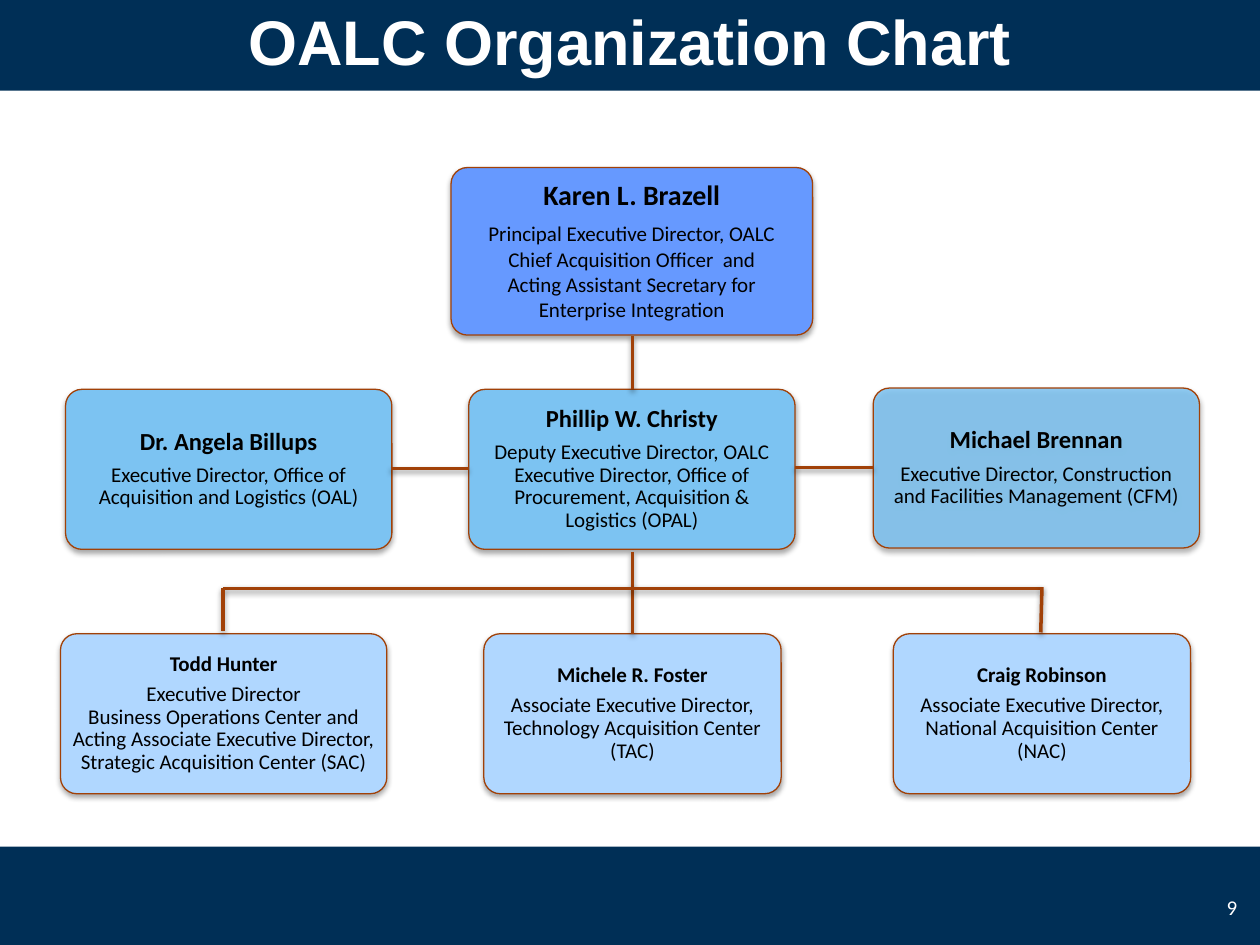
from lxml import etree
from pptx import Presentation
from pptx.dml.color import RGBColor
from pptx.enum.shapes import MSO_CONNECTOR as CONN, MSO_SHAPE as SHAPE
from pptx.enum.text import MSO_ANCHOR as ANCHOR, PP_ALIGN as ALIGN
from pptx.oxml.ns import qn
from pptx.util import Inches, Pt

NAVY = RGBColor(0x00, 0x2F, 0x56)
RUST = RGBColor(0xA1, 0x41, 0x08)
ROYAL = RGBColor(0x66, 0x99, 0xFF)
SKY = RGBColor(0x7C, 0xC3, 0xF2)
PALE = RGBColor(0xB0, 0xD7, 0xFF)
BLACK = RGBColor(0x00, 0x00, 0x00)
WHITE = RGBColor(0xFF, 0xFF, 0xFF)


class ChartSlide:
    """Style of the organization chart and the slide it is drawn on."""

    body_size = 12
    corner = 0.13
    gap = 0.35  # space after a paragraph, as a share of its text size

    def __init__(self, s):
        self.s = s

    def apply(self, target, values):
        for name, value in values.items():
            setattr(target, name, value)

    def add_shadow(self, sp, alpha, dist):
        effects = etree.SubElement(sp._element.spPr, qn("a:effectLst"))
        shadow = etree.SubElement(
            effects, qn("a:outerShdw"), blurRad=str(Pt(3.1)),
            dist=str(Pt(dist)), dir="5400000", rotWithShape="0")
        color = etree.SubElement(shadow, qn("a:srgbClr"), val="000000")
        etree.SubElement(color, qn("a:alpha"), val=str(alpha * 1000))

    def frame(self, sp, inset):
        tf = sp.text_frame
        margins = ("margin_left", "margin_right", "margin_top", "margin_bottom")
        self.apply(tf, {"word_wrap": True, "vertical_anchor": ANCHOR.MIDDLE,
                        **dict.fromkeys(margins, Inches(inset))})
        return tf

    def fill_text(self, p, text, align=ALIGN.CENTER, spacing=None, after=0,
                  **font):
        self.apply(p, {"alignment": align, "line_spacing": spacing,
                       "space_after": Pt(after)})
        r = p.add_run()
        r.text = text
        color = font.pop("color")
        self.apply(r.font, font)
        r.font.color.rgb = color

    def band(self, y):
        sp = self.s.shapes.add_shape(
            SHAPE.RECTANGLE, 0, Inches(y), Inches(10), Inches(0.8))
        sp.shadow.inherit = False
        sp.fill.solid()
        sp.fill.fore_color.rgb = NAVY
        sp.line.fill.background()

    def label(self, x, y, w, h, text, **style):
        sp = self.s.shapes.add_textbox(*map(Inches, (x, y, w, h)))
        self.fill_text(self.frame(sp, 0.05).paragraphs[0], text,
                       color=WHITE, **style)

    def person(self, x, y, w, h, fill, name, size, lines, spacing=0.9,
               inset=0.05, opacity=100):
        sp = self.s.shapes.add_shape(
            SHAPE.ROUNDED_RECTANGLE, *map(Inches, (x, y, w, h)))
        sp.adjustments[0] = self.corner / h
        sp.fill.solid()
        sp.fill.fore_color.rgb = fill
        if opacity < 100:
            color = sp._element.spPr.find(qn("a:solidFill"))[0]
            etree.SubElement(color, qn("a:alpha"), val=str(opacity * 1000))
        sp.line.color.rgb = RUST
        sp.line.width = Pt(0.75)
        self.add_shadow(sp, 35, 1.8)

        tf = self.frame(sp, inset)
        font = {"name": "Calibri", "color": BLACK}
        self.fill_text(tf.paragraphs[0], name, spacing=0.9,
                       after=size * self.gap, size=Pt(size), bold=True, **font)
        for i, text in enumerate(lines, 1):
            last = i == len(lines) and spacing is not None
            self.fill_text(tf.add_paragraph(), text, spacing=spacing,
                           after=self.body_size * self.gap if last else 0,
                           size=Pt(self.body_size), bold=False, **font)

    def link(self, *ends):
        c = self.s.shapes.add_connector(CONN.STRAIGHT, *map(Inches, ends))
        c.line.color.rgb = RUST
        c.line.width = Pt(2)
        self.add_shadow(c, 38, 1.6)


def main():
    prs = Presentation()
    prs.slide_width, prs.slide_height = Inches(10), Inches(7.5)
    chart = ChartSlide(prs.slides.add_slide(prs.slide_layouts[6]))

    # Header and footer
    for y in (6.72, -0.08):
        chart.band(y)
    chart.label(0, -0.08, 10, 0.8, "OALC Organization Chart",
                name="Arial", size=Pt(36), bold=True)
    chart.label(9.45, 7, 0.42, 0.4, "9", align=ALIGN.RIGHT,
                name="Calibri", size=Pt(12))

    # Principal
    chart.person(3.58, 1.33, 2.87, 1.33, ROYAL, "Karen L. Brazell", 16, [
        "Principal Executive Director, OALC",
        "Chief Acquisition Officer  and",
        "Acting Assistant Secretary for Enterprise Integration",
    ], spacing=None, inset=0.09)

    # Executive directors
    directors = [
        (0.52, 3.09, 100, "Dr. Angela Billups",
         "Executive Director, Office of Acquisition and Logistics (OAL)"),
        (3.72, 3.09, 100, "Phillip W. Christy",
         "Deputy Executive Director, OALC Executive Director, Office of "
         "Procurement, Acquisition & Logistics (OPAL)"),
        (6.93, 3.08, 84, "Michael Brennan",
         "Executive Director, Construction and Facilities Management (CFM)"),
    ]
    for x, y, opacity, name, role in directors:
        chart.person(x, y, 2.59, 1.27, SKY, name, 14, [role], opacity=opacity)

    # Acquisition centers
    centers = [
        (0.48, 2.59, "Todd Hunter",
         ["Executive Director",
          "Business Operations Center and Acting Associate Executive Director, "
          "Strategic Acquisition Center (SAC)"]),
        (3.84, 2.36, "Michele R. Foster",
         ["Associate Executive Director, Technology Acquisition Center (TAC)"]),
        (7.09, 2.36, "Craig Robinson",
         ["Associate Executive Director, National Acquisition Center (NAC)"]),
    ]
    for x, w, name, roles in centers:
        chart.person(x, 5.03, w, 1.27, PALE, name, 12, roles)

    # Reporting lines
    links = [
        (5.02, 2.67, 5.02, 3.09),
        (5.02, 4.38, 5.02, 5.03),
        (1.77, 4.67, 8.27, 4.67),
        (3.1, 3.72, 3.72, 3.72),
        (6.31, 3.71, 6.93, 3.71),
        (1.77, 4.67, 1.77, 5.01),
        (8.27, 4.66, 8.26, 5.02),
    ]
    for ends in links:
        chart.link(*ends)

    prs.save("out.pptx")


if __name__ == "__main__":
    main()
